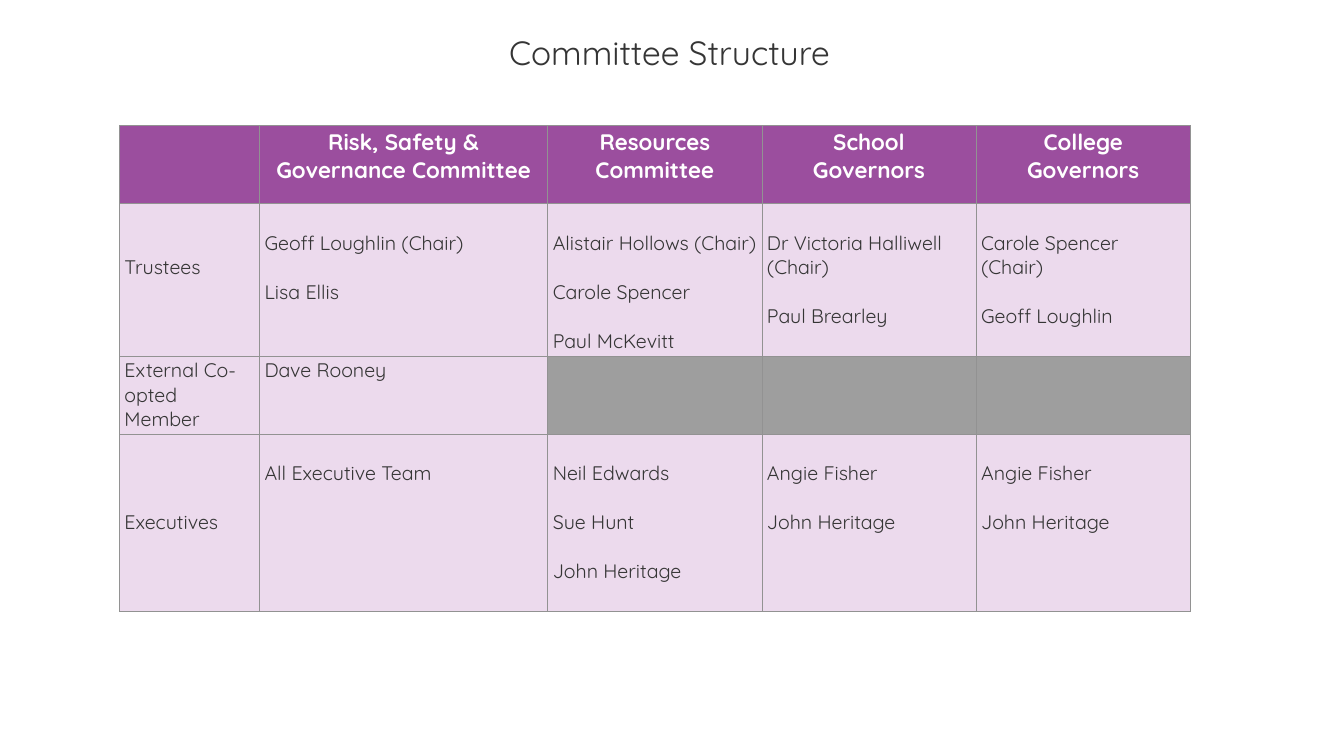
from dataclasses import dataclass

from lxml import etree
from pptx import Presentation, util as u
from pptx.dml.color import RGBColor
from pptx.enum import text
from pptx.oxml.ns import qn


@dataclass(frozen=True)
class Theme:
    font: str = "Quicksand"
    ink: str = "353535"
    white: str = "FFFFFF"
    header: str = "9B4E9E"
    body: str = "ECDAED"
    unused: str = "9E9E9E"
    border: str = "929292"
    title_size: int = 48
    header_size: int = 32
    body_size: int = 28
    line_height: float = 1.25


@dataclass(frozen=True)
class Cell:
    entries: tuple[str, ...] = ()
    lines_above: int = 0
    unused: bool = False


@dataclass(frozen=True)
class Row:
    height: float
    cells: tuple[Cell, ...]
    header: bool = False


THEME = Theme()
COLUMN_WIDTHS = (2.78, 5.72, 4.25, 4.25, 4.25)
UNUSED = Cell(unused=True)
SITE_EXECUTIVES = Cell(("Angie Fisher", "John Heritage"), 1)

ROWS = (
    Row(1.55, (
        Cell(),
        Cell(("Risk, Safety & Governance Committee",)),
        Cell(("Resources Committee",)),
        Cell(("School\nGovernors",)),
        Cell(("College\nGovernors",)),
    ), header=True),
    Row(3.02, (
        Cell(("Trustees",), 2),
        Cell(("Geoff Loughlin (Chair)", "Lisa Ellis"), 1),
        Cell(("Alistair Hollows (Chair)", "Carole Spencer", "Paul McKevitt"), 1),
        Cell(("Dr Victoria Halliwell (Chair)", "Paul Brearley"), 1),
        Cell(("Carole Spencer\n(Chair)", "Geoff Loughlin"), 1),
    )),
    Row(1.55, (
        Cell(("External Co-opted Member",)),
        Cell(("Dave Rooney",)),
        UNUSED, UNUSED, UNUSED,
    )),
    Row(3.51, (
        Cell(("Executives",), 3),
        Cell(("All Executive Team",), 1),
        Cell(("Neil Edwards", "Sue Hunt", "John Heritage"), 1),
        SITE_EXECUTIVES,
        SITE_EXECUTIVES,
    )),
)


def format_runs(paragraph, size: int, color: str, bold: bool = False) -> None:
    for run in paragraph.runs:
        run.font.name = THEME.font
        run.font.size = u.Pt(size)
        run.font.bold = bold
        run.font.color.rgb = RGBColor.from_string(color)


def add_borders(table_cell) -> None:
    properties = table_cell._tc.get_or_add_tcPr()
    for index, side in enumerate(("lnL", "lnR", "lnT", "lnB")):
        line = etree.Element(qn(f"a:{side}"), w=str(u.Pt(1)))
        fill = etree.SubElement(line, qn("a:solidFill"))
        etree.SubElement(fill, qn("a:srgbClr"), val=THEME.border)
        properties.insert(index, line)


def fill_cell(table_cell, cell: Cell, header: bool) -> None:
    background = THEME.header if header else THEME.unused if cell.unused else THEME.body
    table_cell.fill.solid()
    table_cell.fill.fore_color.rgb = RGBColor.from_string(background)
    add_borders(table_cell)
    if not cell.entries:
        return

    size = THEME.header_size if header else THEME.body_size
    color = THEME.white if header else THEME.ink
    line = u.Pt(size * THEME.line_height)
    table_cell.margin_top = u.Inches(0.05) + cell.lines_above * line
    table_cell.text_frame.text = "\n".join(cell.entries)

    starts_entry = [index == 0 for entry in cell.entries
                    for index, _ in enumerate(entry.split("\n"))]
    for index, paragraph in enumerate(table_cell.text_frame.paragraphs):
        if index and starts_entry[index]:
            paragraph.space_before = line
        if header:
            paragraph.alignment = text.PP_ALIGN.CENTER
        format_runs(paragraph, size, color, header)


def add_title(slide, title: str) -> None:
    shape = slide.shapes.add_textbox(
        u.Inches(0.68), u.Inches(0.68), u.Inches(25.21), u.Inches(1))
    shape.text_frame.word_wrap = True
    shape.text_frame.text = title
    paragraph = shape.text_frame.paragraphs[0]
    paragraph.alignment = text.PP_ALIGN.CENTER
    paragraph.line_spacing = 0.9
    format_runs(paragraph, THEME.title_size, THEME.ink)


def add_committee_table(slide, rows: tuple[Row, ...]) -> None:
    table = slide.shapes.add_table(
        len(rows), len(COLUMN_WIDTHS), u.Inches(2.37), u.Inches(2.49),
        u.Inches(sum(COLUMN_WIDTHS)), u.Inches(sum(row.height for row in rows))).table
    table.horz_banding = False
    for column, width in zip(table.columns, COLUMN_WIDTHS):
        column.width = u.Inches(width)
    for table_row, row in zip(table.rows, rows):
        table_row.height = u.Inches(row.height)
        for table_cell, cell in zip(table_row.cells, row.cells):
            fill_cell(table_cell, cell, row.header)


def main() -> None:
    presentation = Presentation()
    presentation.slide_width = u.Inches(26.67)
    presentation.slide_height = u.Inches(15)
    slide = presentation.slides.add_slide(presentation.slide_layouts[6])
    add_title(slide, "Committee Structure")
    add_committee_table(slide, ROWS)
    presentation.save("out.pptx")


if __name__ == "__main__":
    main()
